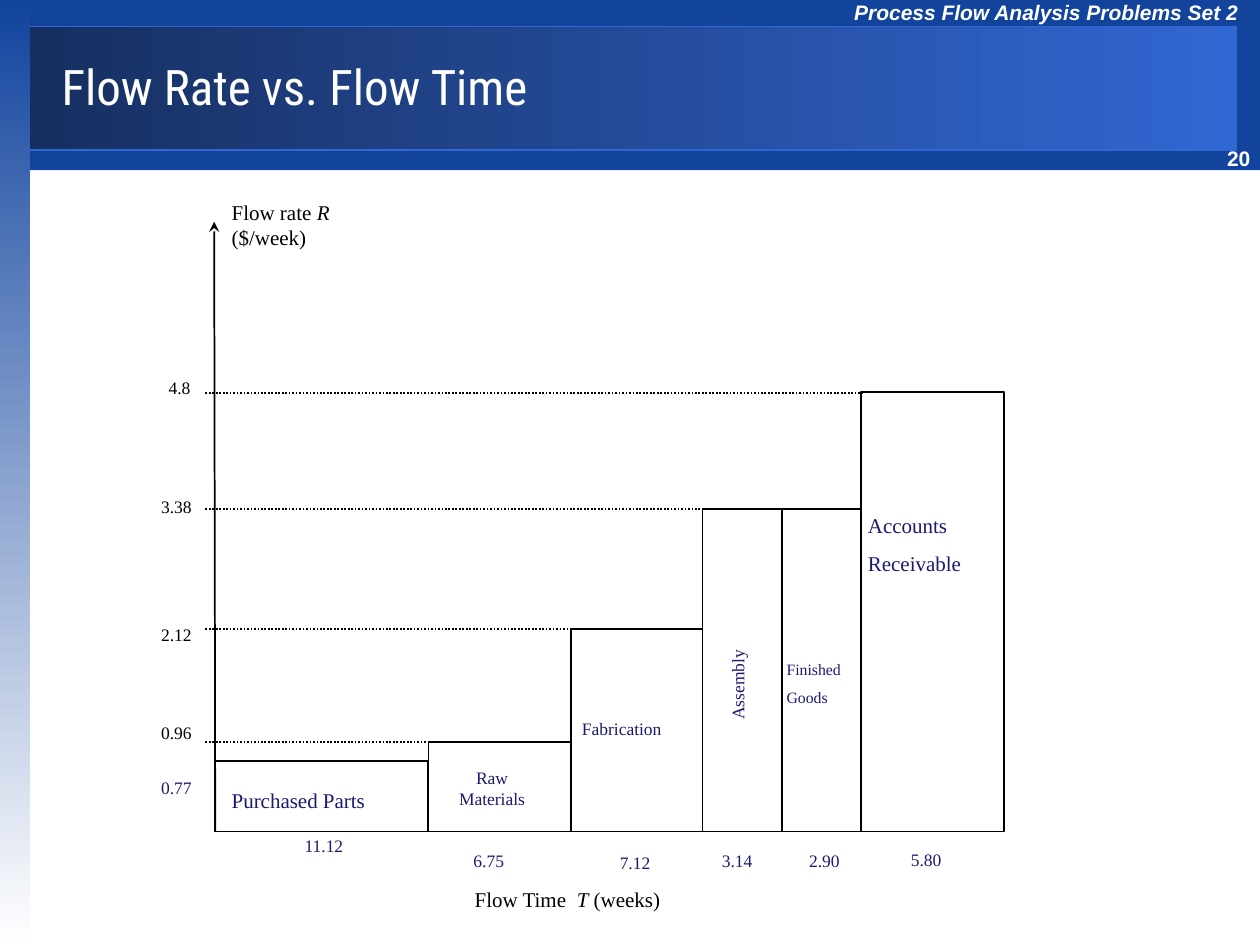
from lxml.etree import SubElement
from pptx import Presentation
from pptx.dml.color import RGBColor
from pptx.enum.dml import MSO_LINE
from pptx.enum.shapes import MSO_CONNECTOR, MSO_SHAPE
from pptx.enum.text import MSO_ANCHOR, MSO_AUTO_SIZE, PP_ALIGN
from pptx.oxml.ns import qn
from pptx.util import Pt

COLORS = {
    "black": "000000",
    "white": "FFFFFF",
    "navy": "1A1A70",
    "band": "12449E",
    "dark": "172F60",
    "bright": "3167D3",
}
SERIF = "Times New Roman"

# name, width, height, name size, name box, name options, time, time offset
BARS = [
    (["Purchased Parts"], 121.8, 40.3, 12, (2.3, 28.8, 90.7, 21.6), {}, "11.12", (44, -1.4)),
    (["Raw", "Materials"], 81.5, 51.1, 10, (10.1, 40.3, 52.6, 31),
     {"align": PP_ALIGN.CENTER}, "6.75", (18.7, 7.2)),
    (["Fabrication"], 75.2, 115.9, 10, (-0.8, 68.4, 80, 19.4), {"wrap": True}, "7.12", (20.8, 7.9)),
    (["Assembly"], 45.2, 184.3, 10, (-19.2, 105.8, 78.5, 19.4),
     {"wrap": True, "rotation": 270}, "3.14", (3.9, 7.2)),
    (["Finished", "Goods"], 45.1, 184.3, 9, (-4.3, 101.5, 64.8, 33.8),
     {"wrap": True, "gap": 5}, "2.90", (8.6, 7.2)),
    (["Accounts", "Receivable"], 82, 251.3, 12, (-2.9, 185.8, 97.9, 43.2),
     {"wrap": True, "gap": 7}, "5.80", (21.6, 6.5)),
]
RATES = [
    ("0.77", -38, 34.6, "navy"),
    ("0.96", -38, 66.2, "black"),
    ("2.12", -38, 122.4, "black"),
    ("3.38", -38, 195.1, "black"),
    ("4.8", -33.7, 263.5, "black"),
]
GUIDES = [(138.4, 51.1), (208.2, 115.9), (336.4, 184.3), (370.2, 250.6)]


def rgb(name):
    return RGBColor.from_string(COLORS[name])


def add_text(s, paragraphs, box, size=10, font=SERIF, color="navy", bold=False,
             italic=False, align=PP_ALIGN.LEFT, gap=0, wrap=False, rotation=0,
             anchor=MSO_ANCHOR.TOP):
    sp = s.shapes.add_textbox(*map(Pt, box))
    sp.rotation = rotation
    tf = sp.text_frame
    tf.word_wrap = wrap
    tf.auto_size = MSO_AUTO_SIZE.NONE
    tf.vertical_anchor = anchor
    for i, runs in enumerate(paragraphs):
        p = tf.add_paragraph() if i else tf.paragraphs[0]
        p.alignment = align
        if i and gap:
            p.space_before = Pt(gap)
        for text, slanted in [(runs, italic)] if isinstance(runs, str) else runs:
            r = p.add_run()
            r.text = text
            r.font.name, r.font.size = font, Pt(size)
            r.font.bold, r.font.italic = bold, slanted
            r.font.color.rgb = rgb(color)


def add_rect(s, box, fill=(), line=None, width=1, angle=0):
    sp = s.shapes.add_shape(MSO_SHAPE.RECTANGLE, *map(Pt, box))
    sp.shadow.inherit = False
    if len(fill) == 2:
        sp.fill.gradient()
        sp.fill.gradient_angle = angle
        for stop, name in zip(sp.fill.gradient_stops, fill):
            stop.color.rgb = rgb(name)
    elif fill:
        sp.fill.solid()
        sp.fill.fore_color.rgb = rgb(fill[0])
    else:
        sp.fill.background()
    if line:
        sp.line.color.rgb = rgb(line)
        sp.line.width = Pt(width)
    else:
        sp.line.fill.background()


def add_line(s, x1, y1, x2, y2, dotted=False, arrow=False):
    c = s.shapes.add_connector(MSO_CONNECTOR.STRAIGHT, Pt(x1), Pt(y1), Pt(x2), Pt(y2))
    c.line.color.rgb = rgb("black")
    c.line.width = Pt(1)
    if dotted:
        c.line.dash_style = MSO_LINE.ROUND_DOT
    if arrow:
        SubElement(c.line._get_or_add_ln(), qn("a:headEnd"), type="stealth")
    SubElement(c._element.spPr, qn("a:effectLst"))


def add_header(s, left, top, width, height):
    add_rect(s, (left, top, width, height), ["band"])
    add_rect(s, (left, top + 15.1, width - 13.7, 70.6), ["dark", "bright"], "bright", 0.75)
    label = {"size": 12, "font": "Arial", "color": "white", "bold": True}
    add_text(s, ["20"], (left + 679.7, top + 79.9, 28.8, 21.6), **label)
    add_text(s, ["Process Flow Analysis Problems Set 2"],
             (left + 466.6, top - 3.6, 246.2, 21.6), italic=True, **label)
    add_text(s, ["Flow Rate vs. Flow Time"], (left + 13.7, top + 15.1, 668.9, 67.7),
             size=28, font="Roboto Condensed", color="white", wrap=True,
             anchor=MSO_ANCHOR.MIDDLE)


def add_side_strip(s, left, top, width, height):
    add_rect(s, (left, top, width, height), ["band", "white"], angle=270)


def add_flow_chart(s, left, top, width, height):
    base = top + height
    add_line(s, left - 0.6, top, left, base, arrow=True)
    add_line(s, left, base, left + width, base)
    for end, rise in GUIDES:
        add_line(s, left - 5.6, base - rise, left + end, base - rise, dotted=True)
    for rate, dx, rise, color in RATES:
        add_text(s, [rate], (left + dx, base - rise, 31.7, 19.4), color=color)

    x = left
    for name, w, h, size, (dx, rise, tw, th), options, time, (tx, drop) in BARS:
        add_rect(s, (x, base - h, w, h), line="black")
        add_text(s, name, (x + dx, base - rise, tw, th), size=size, **options)
        add_text(s, [time], (x + tx, base + drop, 36.7 if len(time) > 4 else 31.7, 19.4))
        x += w

    add_text(s, [[("Flow rate ", False), ("R", True)], "($/week)"],
             (left + 2.3, top - 16.5, 70.6, 36), size=12, color="black")
    add_text(s, [[("Flow Time ", False), (" T", True), (" (weeks)", False)]],
             (left + 141.2, base + 28.1, 161.3, 21.6), size=12, color="black", wrap=True)


def main():
    prs = Presentation()
    prs.slide_width, prs.slide_height = Pt(720), Pt(540)
    s = prs.slides.add_slide(prs.slide_layouts[6])
    add_header(s, 14.4, 0, 705.6, 97.2)
    add_side_strip(s, 0, 0, 17.3, 540)
    add_flow_chart(s, 123, 126.7, 448, 348.5)
    prs.save("out.pptx")


if __name__ == "__main__":
    main()
